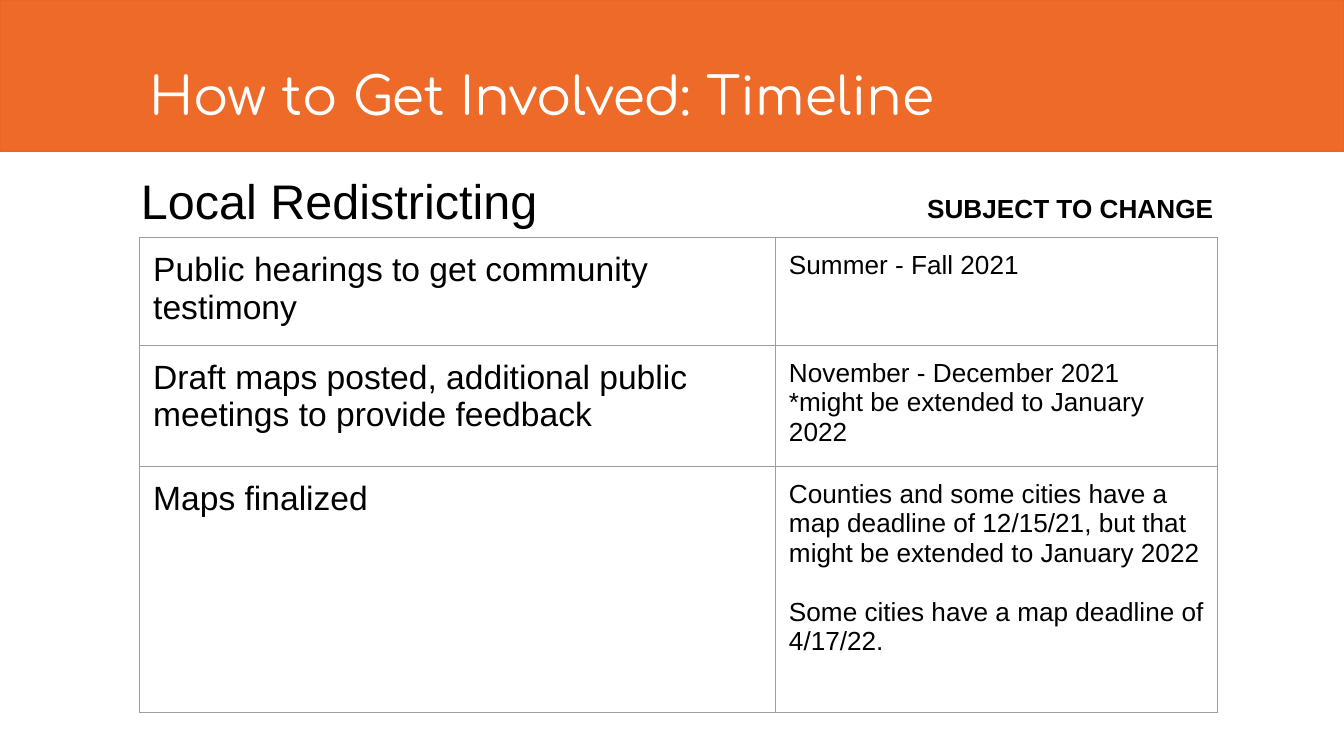
from lxml import etree
from pptx import Presentation
from pptx.dml.color import RGBColor
from pptx.enum.shapes import MSO_SHAPE
from pptx.enum.text import MSO_ANCHOR, MSO_AUTO_SIZE, PP_ALIGN
from pptx.oxml.ns import qn
from pptx.util import Pt

COLORS = {
    "band": "EE6A29",
    "band_line": "EC6523",
    "title": "FFFFFF",
    "text": "000000",
    "border": "9E9E9E",
}
FORMATS = {
    "title": {"name": "Comfortaa", "size": Pt(28), "bold": False},
    "heading": {"name": "Arial", "size": Pt(26), "bold": False},
    "notice": {"name": "Arial", "size": Pt(14), "bold": True},
    "step": {"name": "Arial", "size": Pt(18), "bold": False},
    "date": {"name": "Arial", "size": Pt(14), "bold": False},
}
INSET = 7.2
PARAGRAPH_GAP = 15.8
TIMELINE = [
    (57.6, "Public hearings to get community testimony",
     [("Summer - Fall 2021", 0)]),
    (64.8, "Draft maps posted, additional public meetings to provide feedback",
     [("November - December 2021", 0),
      ("*might be extended to January 2022", 0)]),
    (131.8, "Maps finalized",
     [("Counties and some cities have a map deadline of 12/15/21, "
       "but that might be extended to January 2022", 0),
      ("Some cities have a map deadline of 4/17/22.", PARAGRAPH_GAP)]),
]


def color(name):
    return RGBColor.from_string(COLORS[name])


def set_insets(target, vertical=INSET):
    insets = {"margin_left": INSET, "margin_right": INSET,
              "margin_top": vertical, "margin_bottom": vertical}
    for attribute, value in insets.items():
        setattr(target, attribute, Pt(value))


def write_paragraphs(text_frame, lines, style, color_name="text"):
    for index, (text, gap) in enumerate(lines):
        paragraph = text_frame.paragraphs[0] if index == 0 else text_frame.add_paragraph()
        paragraph.alignment = PP_ALIGN.LEFT
        paragraph.space_before = Pt(gap)
        run = paragraph.add_run()
        run.text = text
        for attribute, value in FORMATS[style].items():
            setattr(run.font, attribute, value)
        run.font.color.rgb = color(color_name)


def add_header(slide, left, top, width, height):
    band = slide.shapes.add_shape(
        MSO_SHAPE.RECTANGLE, Pt(left), Pt(top), Pt(width), Pt(height))
    band.shadow.inherit = False
    band.fill.solid()
    band.fill.fore_color.rgb = color("band")
    band.line.color.rgb = color("band_line")
    band.line.width = Pt(0.75)

    title = slide.shapes.title
    title.element.addprevious(band.element)
    title.left, title.top = Pt(left + 72.7), Pt(top + 14.4)
    title.width, title.height = Pt(593.3), Pt(56.9)
    text_frame = title.text_frame
    text_frame.auto_size = MSO_AUTO_SIZE.NONE
    text_frame.vertical_anchor = MSO_ANCHOR.BOTTOM
    set_insets(text_frame, 3.6)
    write_paragraphs(text_frame, [("How to Get Involved: Timeline", 0)], "title", "title")


def add_label(slide, text, style, left, top, width, height):
    box = slide.shapes.add_textbox(Pt(left), Pt(top), Pt(width), Pt(height))
    box.text_frame.word_wrap = True
    set_insets(box.text_frame)
    write_paragraphs(box.text_frame, [(text, 0)], style)


def add_subheader(slide, left, top, width, height):
    add_label(slide, "Local Redistricting", "heading", left, top, width, height)
    add_label(slide, "SUBJECT TO CHANGE", "notice",
              left + 421.2, top + 11.5, 167.8, 31.7)


def set_borders(cell):
    properties = cell._tc.get_or_add_tcPr()
    for index, side in enumerate(("lnL", "lnR", "lnT", "lnB")):
        line = etree.Element(qn(f"a:{side}"), w=str(Pt(0.75)))
        fill = etree.SubElement(line, qn("a:solidFill"))
        etree.SubElement(fill, qn("a:srgbClr"), val=COLORS["border"])
        properties.insert(index, line)


def add_timeline(slide, left, top, width, height):
    step_width = 340.6
    table = slide.shapes.add_table(
        len(TIMELINE), 2, Pt(left), Pt(top), Pt(width), Pt(height)).table
    table.first_row = table.horz_banding = False
    table.columns[0].width = Pt(step_width)
    table.columns[1].width = Pt(width - step_width)
    for row, (row_height, step, dates) in enumerate(TIMELINE):
        table.rows[row].height = Pt(row_height)
        for column, (lines, style) in enumerate([([(step, 0)], "step"), (dates, "date")]):
            cell = table.cell(row, column)
            cell.fill.background()
            set_borders(cell)
            set_insets(cell)
            write_paragraphs(cell.text_frame, lines, style)


def main():
    presentation = Presentation()
    presentation.slide_width, presentation.slide_height = Pt(720), Pt(405)
    slide = presentation.slides.add_slide(presentation.slide_layouts[5])
    add_header(slide, 0, 0, 720, 81)
    add_subheader(slide, 68.4, 84.2, 591.8, 46.1)
    add_timeline(slide, 74.9, 127.4, 577.5, sum(row[0] for row in TIMELINE))
    presentation.save("out.pptx")


if __name__ == "__main__":
    main()
